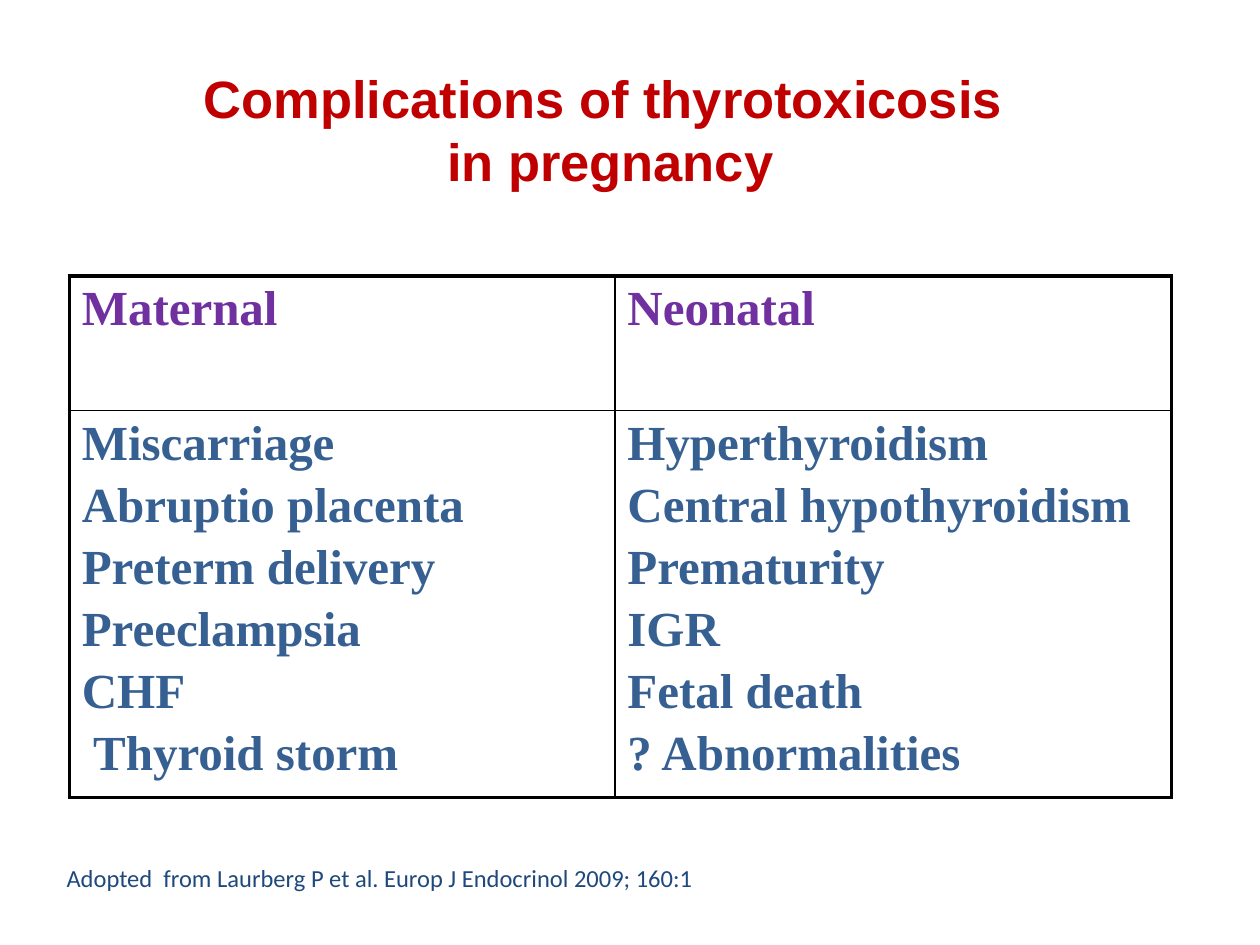
from lxml import etree
from pptx import Presentation
from pptx.dml.color import RGBColor
from pptx.enum.text import MSO_ANCHOR, PP_ALIGN
from pptx.oxml.ns import qn
from pptx.util import Inches, Pt

CENTER, LEFT = PP_ALIGN.CENTER, PP_ALIGN.LEFT
TOP = MSO_ANCHOR.TOP
COLORS = {"title": "C00000", "head": "7030A0", "body": "376092",
          "source": "1F497D", "line": "000000"}
FORMATS = {
    "title": {"name": "Arial", "size": Pt(30), "bold": True},
    "head": {"name": "Times New Roman", "size": Pt(28), "bold": True},
    "body": {"name": "Times New Roman", "size": Pt(28), "bold": True},
    "source": {"name": "Calibri", "size": Pt(14), "bold": False},
}
OUTER, INNER = 2.25, 1
COLS, ROWS = [4.33, 4.42], [1.07, 3.07]
CELLS = [
    [["Maternal"], ["Neonatal"]],
    [["Miscarriage", "Abruptio placenta", "Preterm delivery",
      "Preeclampsia", "CHF", " Thyroid storm"],
     ["Hyperthyroidism", "Central hypothyroidism", "Prematurity",
      "IGR", "Fetal death", "? Abnormalities"]],
]


def write(tf, lines, role, align=LEFT, gap=0):
    for i, line in enumerate(lines):
        p = tf.paragraphs[0] if i == 0 else tf.add_paragraph()
        p.alignment = align
        p.space_before = Pt(gap if i else 0)
        r = p.add_run()
        r.text = line
        for key, value in FORMATS[role].items():
            setattr(r.font, key, value)
        r.font.color.rgb = RGBColor.from_string(COLORS[role])


def add_border(cell, side, width):
    ln = etree.SubElement(cell._tc.get_or_add_tcPr(), qn("a:ln" + side),
                          w=str(Pt(width)))
    fill = etree.SubElement(ln, qn("a:solidFill"))
    etree.SubElement(fill, qn("a:srgbClr"), val=COLORS["line"])


prs = Presentation()
prs.slide_width, prs.slide_height = Inches(10), Inches(7.5)
s = prs.slides.add_slide(prs.slide_layouts[5])

# Title
sp = s.shapes.title
sp.left, sp.top, sp.width, sp.height = map(Inches, (1.48, 0.47, 6.73, 1.11))
tf = sp.text_frame
tf.word_wrap = False
tf.vertical_anchor = TOP
write(tf, ["Complications of thyrotoxicosis ", "in pregnancy"], "title", CENTER)

# Table of complications
table = s.shapes.add_table(len(ROWS), len(COLS), Inches(0.55), Inches(2.19),
                           Inches(sum(COLS)), Inches(sum(ROWS))).table
table.first_row = table.horz_banding = False
for column, width in zip(table.columns, COLS):
    column.width = Inches(width)
for row, height in zip(table.rows, ROWS):
    row.height = Inches(height)
for y, row_cells in enumerate(CELLS):
    for x, lines in enumerate(row_cells):
        cell = table.cell(y, x)
        write(cell.text_frame, lines, "body" if y else "head", gap=4.4)
        on_edge = {"L": x == 0, "R": x == len(COLS) - 1,
                   "T": y == 0, "B": y == len(ROWS) - 1}
        for side, outer in on_edge.items():
            add_border(cell, side, OUTER if outer else INNER)
        cell.fill.background()

# Source line
sp = s.shapes.add_textbox(*map(Inches, (0.43, 6.8, 5.27, 0.34)))
sp.text_frame.word_wrap = False
write(sp.text_frame,
      ["Adopted  from Laurberg P et al. Europ J Endocrinol 2009; 160:1"],
      "source")

prs.save("out.pptx")
